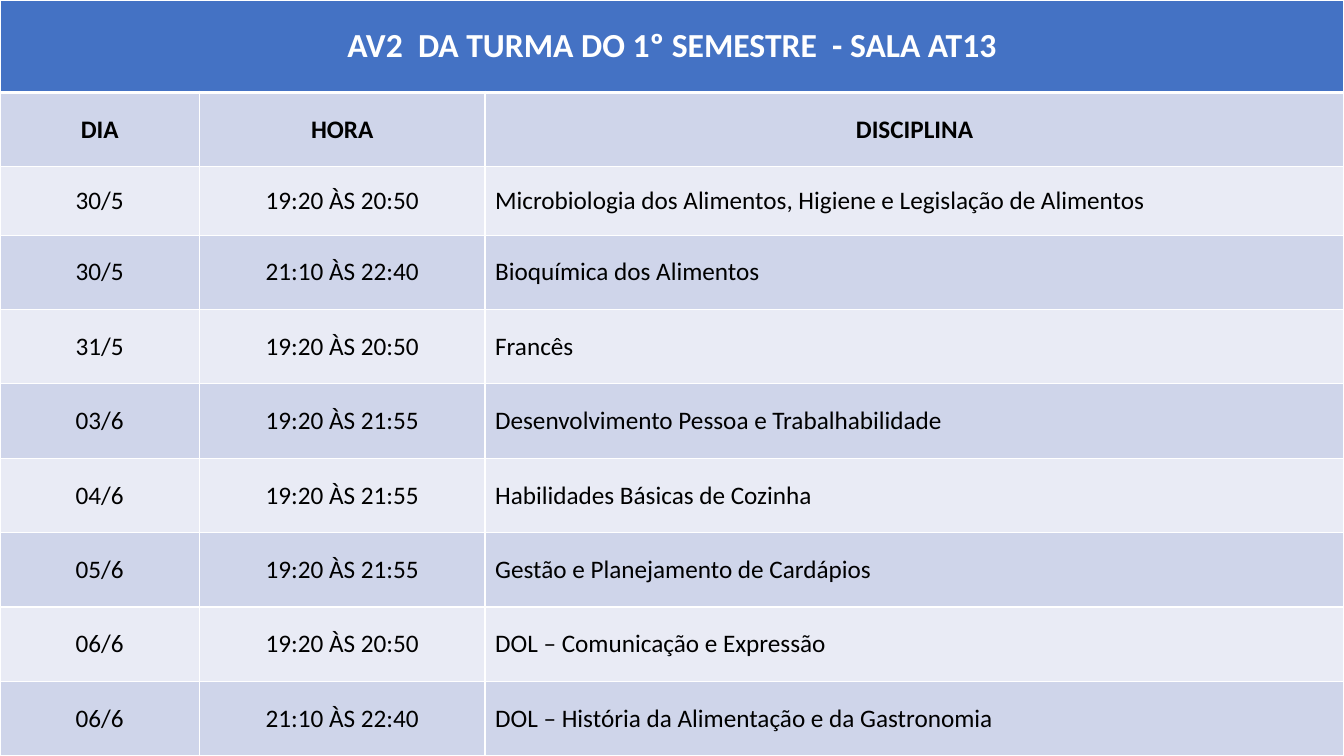
from lxml.etree import SubElement
from pptx import Presentation
from pptx.dml.color import RGBColor
from pptx.enum.text import MSO_ANCHOR, PP_ALIGN
from pptx.oxml.ns import qn
from pptx.util import Pt


def color(hex_string):
    return RGBColor.from_string(hex_string)


def add_border(cell, side, width):
    line = SubElement(cell._tc.get_or_add_tcPr(), qn(f"a:ln{side}"), w=str(Pt(width)))
    fill = SubElement(line, qn("a:solidFill"))
    SubElement(fill, qn("a:srgbClr"), val="FFFFFF")


TITLE = "AV2  DA TURMA DO 1º SEMESTRE  - SALA AT13"
SCHEDULE = [
    (TITLE, "", ""),
    ("DIA", "HORA", "DISCIPLINA"),
    ("30/5", "19:20 ÀS 20:50", "Microbiologia dos Alimentos, Higiene e Legislação de Alimentos"),
    ("30/5", "21:10 ÀS 22:40", "Bioquímica dos Alimentos"),
    ("31/5", "19:20 ÀS 20:50", "Francês"),
    ("03/6", "19:20 ÀS 21:55", "Desenvolvimento Pessoa e Trabalhabilidade"),
    ("04/6", "19:20 ÀS 21:55", "Habilidades Básicas de Cozinha"),
    ("05/6", "19:20 ÀS 21:55", "Gestão e Planejamento de Cardápios"),
    ("06/6", "19:20 ÀS 20:50", "DOL – Comunicação e Expressão"),
    ("06/6", "21:10 ÀS 22:40", "DOL – História da Alimentação e da Gastronomia"),
]
COLUMN_WIDTHS = [142.5, 204, 613.5]
ROW_HEIGHTS = [66, 53, 49] + [372 / 7] * 7
BAND_FILLS = ["E9EBF5", "CFD5EA"]

presentation = Presentation()
presentation.slide_width = Pt(960)
presentation.slide_height = Pt(540)
slide = presentation.slides.add_slide(presentation.slide_layouts[6])

table = slide.shapes.add_table(
    len(SCHEDULE), len(COLUMN_WIDTHS), Pt(0), Pt(0), Pt(960), Pt(540)
).table
for column, width in zip(table.columns, COLUMN_WIDTHS):
    column.width = Pt(width)
for row, height in zip(table.rows, ROW_HEIGHTS):
    row.height = Pt(height)

for row_index, texts in enumerate(SCHEDULE):
    is_title = row_index == 0
    for column_index, text in enumerate(texts):
        cell = table.cell(row_index, column_index)
        add_border(cell, "L", 1)
        add_border(cell, "R", 1)
        add_border(cell, "T", 3 if row_index == 1 else 1)
        add_border(cell, "B", 3 if is_title else 1)
        cell.fill.solid()
        cell.fill.fore_color.rgb = color("4472C4" if is_title else BAND_FILLS[row_index % 2])
        cell.vertical_anchor = MSO_ANCHOR.MIDDLE
        cell.text = text
        paragraph = cell.text_frame.paragraphs[0]
        is_subject = row_index > 1 and column_index == 2
        paragraph.alignment = PP_ALIGN.LEFT if is_subject else PP_ALIGN.CENTER
        paragraph.font.name = "Calibri"
        paragraph.font.size = Pt(24 if is_title else 18)
        paragraph.font.bold = row_index < 2
        paragraph.font.color.rgb = color("FFFFFF" if is_title else "000000")

table.cell(0, 0).merge(table.cell(0, 2))

presentation.save("out.pptx")
